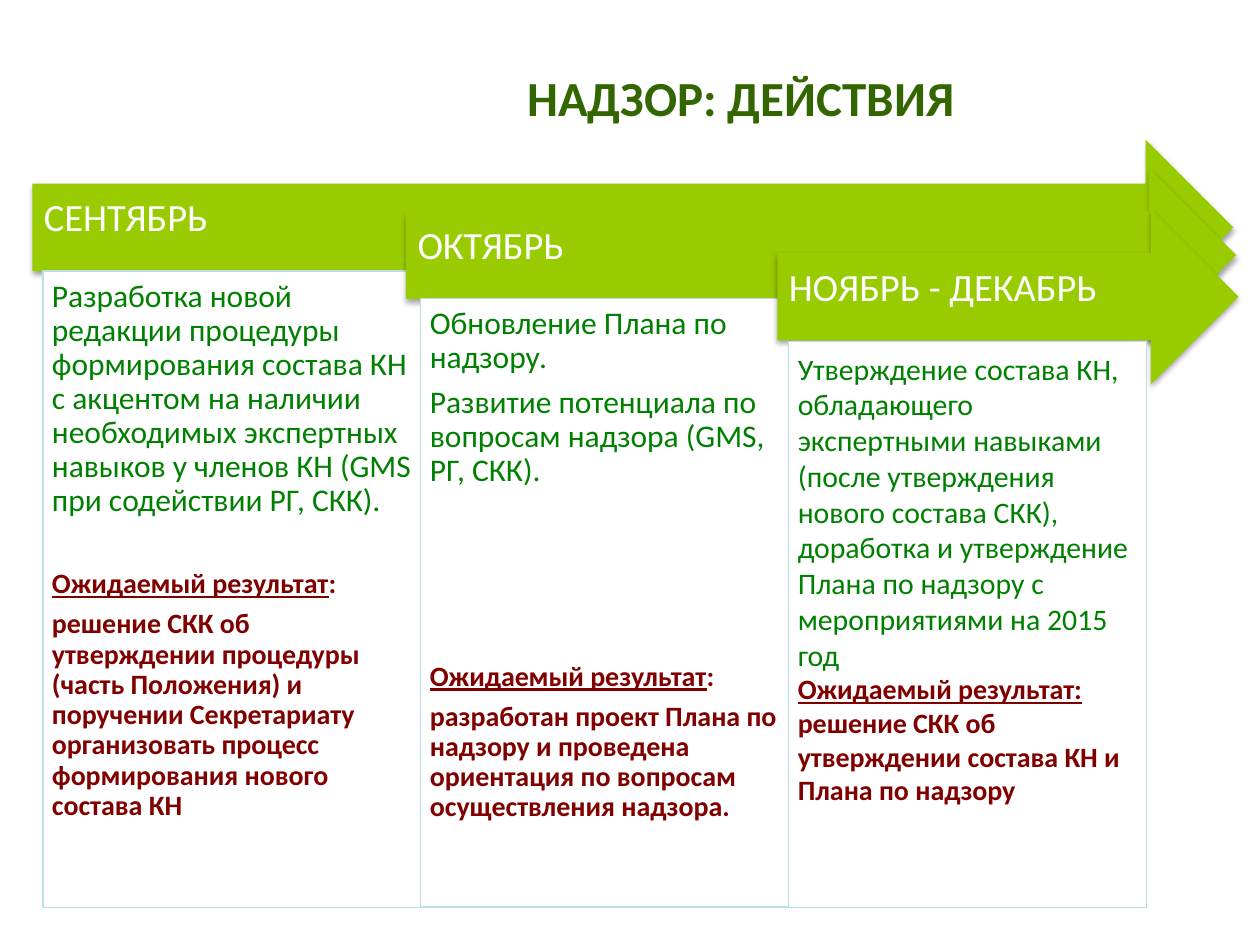
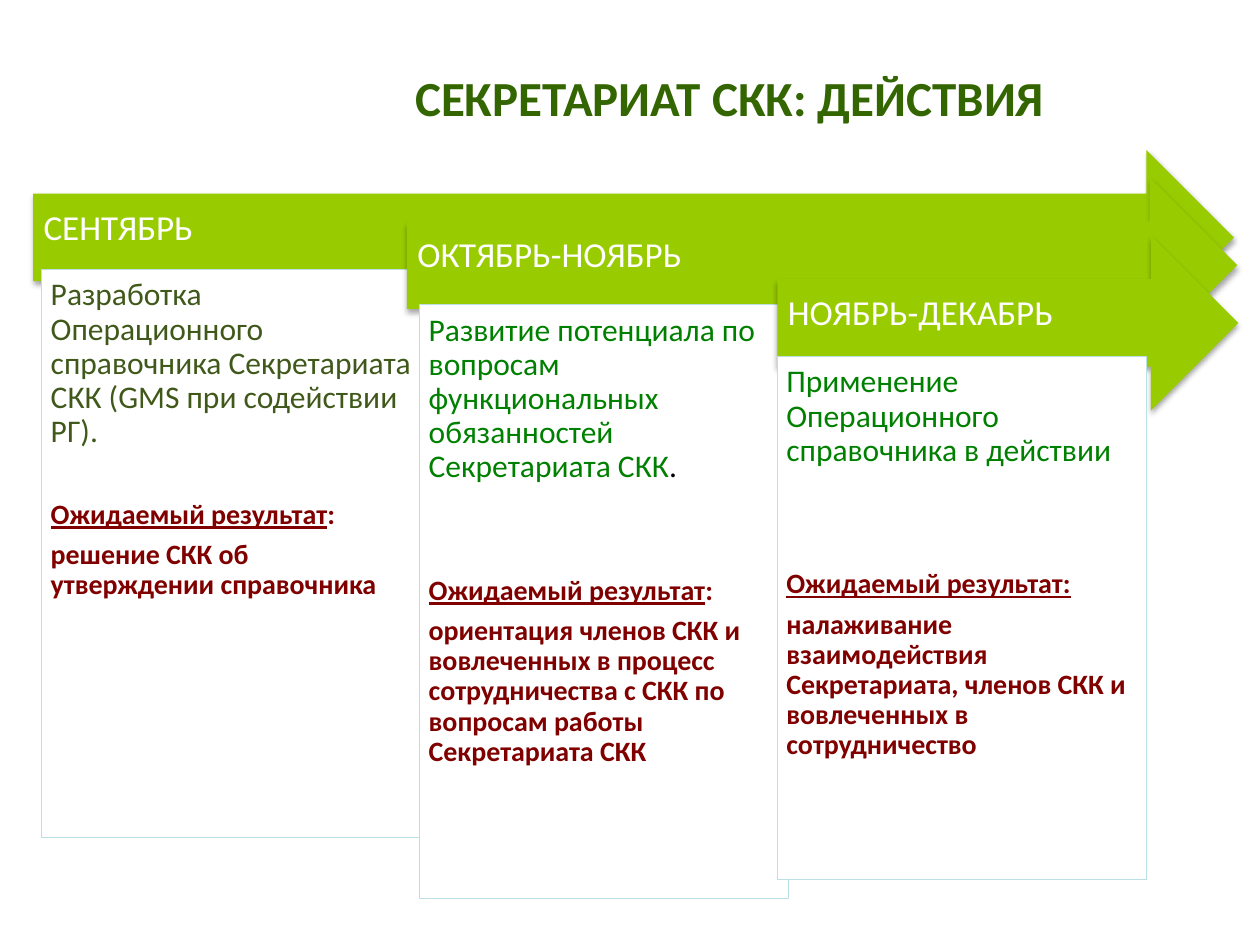
from typing import NamedTuple

from lxml.etree import SubElement
from pptx import Presentation
from pptx.dml.color import RGBColor
from pptx.enum.shapes import MSO_SHAPE
from pptx.enum.text import MSO_ANCHOR, PP_ALIGN
from pptx.oxml.ns import qn
from pptx.util import Pt

COLORS = {
    "title": "336600",
    "arrow": "99CC00",
    "header": "FFFFFF",
    "box": "FFFFFF",
    "border": "BBE0E3",
    "action": "008000",
    "olive": "40591B",
    "result": "800000",
    "black": "000000",
}
FONT = "Calibri"
ARROW_HEIGHT = 100
BLANK_LINE = 23.2  # one 16 pt line with its spacing
RESULT_HEADING = "Ожидаемый результат"


class Column(NamedTuple):
    month: str
    arrow: tuple            # left, top, width
    box: tuple              # left, top, width, height
    actions: list           # one list of (text, colour) runs per paragraph
    result: str
    gap: float              # space above the result heading
    underline_colon: bool = False
    action_size: float = 18
    line_spacing: float = 0.9
    after: float = 0.35     # space after, as a share of the font size


class Deck:
    """Holds the style and the current slide."""

    def __init__(self):
        self.presentation = Presentation()
        self.presentation.slide_width = Pt(720)
        self.presentation.slide_height = Pt(540)
        self.slide = None

    def new_slide(self):
        layout = self.presentation.slide_layouts[6]
        self.slide = self.presentation.slides.add_slide(layout)

    def frame(self, shape, anchor, margins):
        text_frame = shape.text_frame
        sides = ("margin_left", "margin_top", "margin_right", "margin_bottom")
        values = {side: Pt(margin) for side, margin in zip(sides, margins)}
        values |= {"word_wrap": True, "vertical_anchor": anchor}
        for name, value in values.items():
            setattr(text_frame, name, value)
        return text_frame

    def fill_paragraph(self, paragraph, runs, size, paragraph_format, bold=False):
        """Fill a paragraph with (text, colour, underline) runs."""
        for name, value in paragraph_format.items():
            setattr(paragraph, name, value)
        for text, color, underline in runs:
            run = paragraph.add_run()
            run.text = text
            font_format = {"name": FONT, "size": Pt(size), "bold": bold,
                           "underline": underline}
            for name, value in font_format.items():
                setattr(run.font, name, value)
            run.font.color.rgb = RGBColor.from_string(COLORS[color])

    def shape(self, kind, place, fill):
        shape = self.slide.shapes.add_shape(kind, *map(Pt, place))
        shape.shadow.inherit = False
        shape.fill.solid()
        shape.fill.fore_color.rgb = RGBColor.from_string(COLORS[fill])
        return shape

    def soft_shadow(self, shape):
        effects = shape._element.spPr.find(qn("a:effectLst"))
        shadow = SubElement(effects, qn("a:outerShdw"), blurRad=str(Pt(3.1)),
                            dist=str(Pt(1.8)), dir="5400000", rotWithShape="0")
        color = SubElement(shadow, qn("a:srgbClr"), val=COLORS["black"])
        SubElement(color, qn("a:alpha"), val="35000")

    def title(self, text, left, width):
        box = self.slide.shapes.add_textbox(Pt(left), Pt(12.2), Pt(width), Pt(86.4))
        text_frame = self.frame(box, MSO_ANCHOR.MIDDLE, (7.2, 3.6, 7.2, 3.6))
        self.fill_paragraph(text_frame.paragraphs[0], [(text, "title", False)], 28,
                            {"alignment": PP_ALIGN.CENTER}, bold=True)

    def arrow(self, text, place, size):
        arrow = self.shape(MSO_SHAPE.RIGHT_ARROW, (*place, ARROW_HEIGHT), "arrow")
        arrow.line.fill.background()
        self.soft_shadow(arrow)
        inset = 0.3 * size
        text_frame = self.frame(arrow, MSO_ANCHOR.MIDDLE, (inset, inset, 20, 15.8))
        self.fill_paragraph(text_frame.paragraphs[0], [(text, "header", False)], size,
                            {"alignment": PP_ALIGN.LEFT, "line_spacing": 0.9})

    def box(self, column):
        box = self.shape(MSO_SHAPE.RECTANGLE, column.box, "box")
        box.line.color.rgb = RGBColor.from_string(COLORS["border"])
        box.line.width = Pt(0.75)
        text_frame = self.frame(box, MSO_ANCHOR.TOP, (5.2,) * 4)

        # Actions, then the heading and text of the expected result
        size = column.action_size
        rows = [([(text, color, False) for text, color in runs], size, 0, False)
                for runs in column.actions]
        heading = [(RESULT_HEADING, "result", True),
                   (":", "result", column.underline_colon)]
        rows.append((heading, 16, column.gap, True))
        rows.append(([(column.result, "result", False)], 16, 0, True))
        for index, (runs, size, before, bold) in enumerate(rows):
            paragraph = text_frame.add_paragraph() if index else text_frame.paragraphs[0]
            paragraph_format = {
                "alignment": PP_ALIGN.LEFT,
                "line_spacing": column.line_spacing,
                "space_before": Pt(before),
                "space_after": Pt(column.after * size),
            }
            self.fill_paragraph(paragraph, runs, size, paragraph_format, bold)

    def timeline(self, columns, header_size):
        for column in columns:
            self.arrow(column.month, column.arrow, header_size)
            self.box(column)


SUPERVISION = [
    Column("СЕНТЯБРЬ", (18.5, 79.9, 686.2), (24.5, 154.8, 216.7, 363.6),
           [[("Разработка новой редакции процедуры формирования состава КН "
              "с акцентом на наличии необходимых экспертных навыков у членов КН "
              "(GMS при содействии РГ, СКК).", "action")]],
           "решение СКК об утверждении процедуры (часть Положения) и поручении "
           "Секретариату организовать процесс формирования нового состава КН",
           BLANK_LINE),
    Column("ОКТЯБРЬ", (232, 95.8, 474.5), (240.5, 170.6, 211, 347.8),
           [[("Обновление Плана по надзору.", "action")],
            [("Развитие потенциала по вопросам надзора (GMS, РГ, СКК).", "action")]],
           "разработан проект Плана по надзору и проведена ориентация по вопросам "
           "осуществления надзора.",
           4 * BLANK_LINE),
    Column("НОЯБРЬ - ДЕКАБРЬ", (444.2, 119.5, 263.5), (450.7, 195.1, 204.5, 323.3),
           [[("Утверждение состава КН, обладающего экспертными навыками (после "
              "утверждения нового состава СКК), доработка и утверждение Плана по "
              "надзору с мероприятиями на 2015 год", "action")]],
           "решение СКК об утверждении состава КН и Плана по надзору",
           0, underline_colon=True, action_size=17, line_spacing=1.0, after=0),
]

SECRETARIAT = [
    Column("СЕНТЯБРЬ", (18.9, 85.7, 686.2), (23.8, 154.1, 216.7, 324.7),
           [[("Разработка Операционного справочника Секретариата СКК "
              "(GMS при содействии РГ).", "olive")]],
           "решение СКК об утверждении справочника",
           BLANK_LINE),
    Column("ОКТЯБРЬ-НОЯБРЬ", (232.5, 101.5, 474.5), (239.8, 174.2, 211, 339.1),
           [[("Развитие потенциала по вопросам функциональных обязанностей "
              "Секретариата СКК", "action"), (".", "black")]],
           "ориентация членов СКК и вовлеченных в процесс сотрудничества с СКК "
           "по вопросам работы Секретариата СКК",
           2 * BLANK_LINE),
    Column("НОЯБРЬ-ДЕКАБРЬ", (444.2, 134.6, 263.5), (444.2, 203.8, 211, 298.8),
           [[("Применение Операционного справочника в действии", "action")]],
           "налаживание взаимодействия Секретариата, членов СКК и вовлеченных "
           "в сотрудничество",
           52, underline_colon=True),
]


def main():
    deck = Deck()

    # Supervision actions
    deck.new_slide()
    deck.title("НАДЗОР: ДЕЙСТВИЯ", 138.2, 570.2)
    deck.timeline(SUPERVISION, 22)

    # Secretariat actions
    deck.new_slide()
    deck.title("СЕКРЕТАРИАТ СКК: ДЕЙСТВИЯ", 113.8, 606.2)
    deck.timeline(SECRETARIAT, 20)

    deck.presentation.save("out.pptx")


if __name__ == "__main__":
    main()
